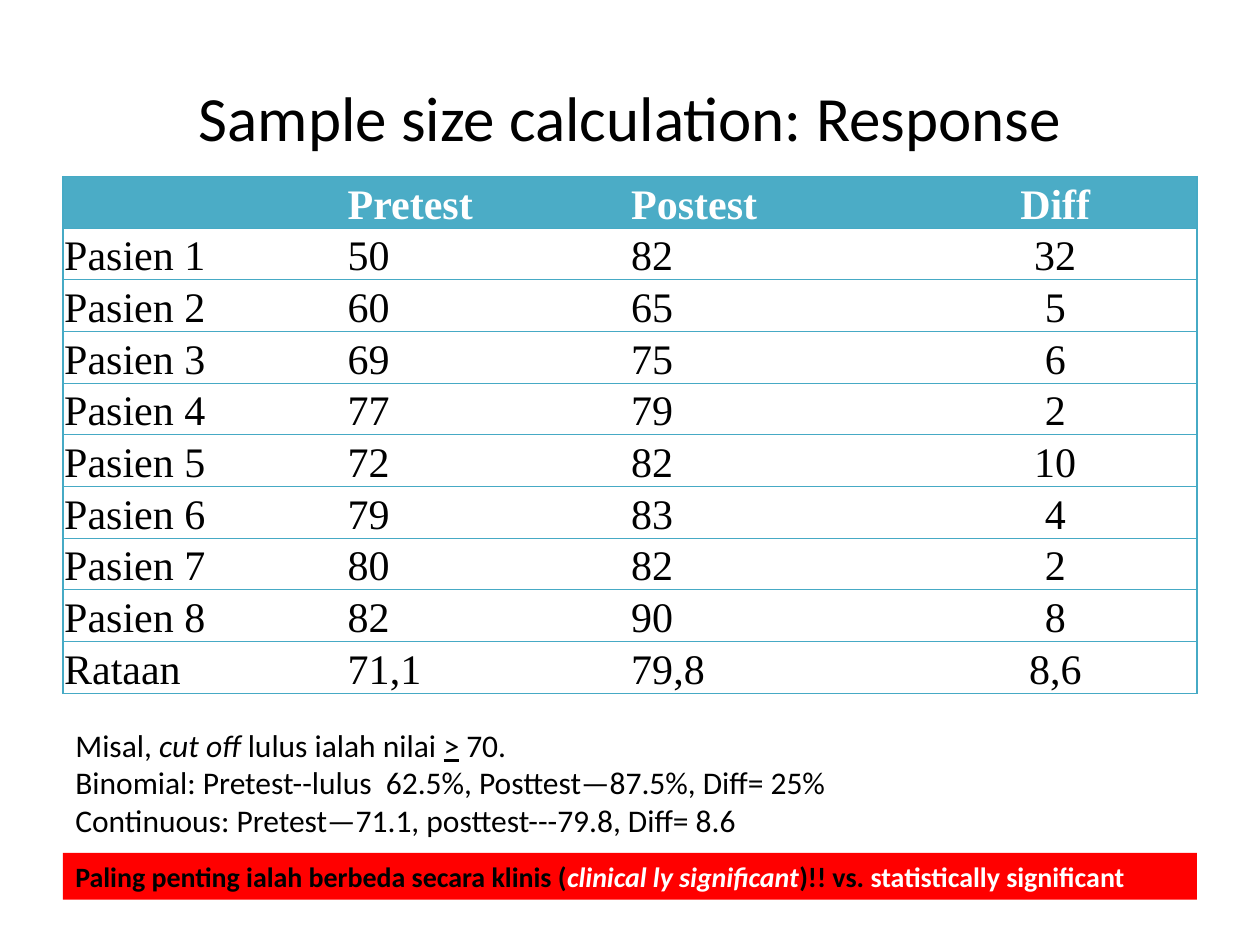
from dataclasses import dataclass

from lxml import etree
from pptx import Presentation, util as u
from pptx.dml.color import RGBColor
from pptx.enum import shapes, text
from pptx.oxml import ns

COLUMNS, ROWS = 100, 75
UNIT = u.Inches(0.1)
LEFT, WIDTH = 5, 90


@dataclass(frozen=True)
class Theme:
    body_font: str = "Calibri"
    table_font: str = "Times New Roman"
    black: str = "000000"
    white: str = "FFFFFF"
    red: str = "FF0000"
    header: str = "4BACC6"
    border: str = "46AAC5"
    title_size: int = 36
    table_size: int = 24
    note_size: int = 18
    banner_size: int = 16
    border_width: float = 0.75


THEME = Theme()

HEADINGS = ["", "Pretest", "Postest", "Diff"]
SCORES = [(50, 82, 32), (60, 65, 5), (69, 75, 6), (77, 79, 2),
          (72, 82, 10), (79, 83, 4), (80, 82, 2), (82, 90, 8)]
AVERAGES = ["Rataan", "71,1", "79,8", "8,6"]


def grid(*cells):
    """Turn grid columns and rows into slide lengths."""
    return [int(cell * UNIT) for cell in cells]


def add_run(paragraph, words, size, color=THEME.black, font=THEME.body_font,
            bold=False, italic=False, underline=False):
    run = paragraph.add_run()
    run.text = words
    run.font.name = font
    run.font.size = u.Pt(size)
    run.font.color.rgb = RGBColor.from_string(color)
    run.font.bold = bold
    run.font.italic = italic
    run.font.underline = underline


def fill_frame(frame, paragraphs, size, **common):
    """Write paragraphs, each a list of (words, format) runs."""
    frame.word_wrap = True
    for index, runs in enumerate(paragraphs):
        paragraph = frame.add_paragraph() if index else frame.paragraphs[0]
        for words, look in runs:
            add_run(paragraph, words, size, **{**common, **look})


def add_text(slide, top, height, paragraphs, size):
    box = slide.shapes.add_textbox(*grid(LEFT, top, WIDTH, height))
    fill_frame(box.text_frame, paragraphs, size)
    return box.text_frame


def add_banner(slide, top, height, runs):
    banner = slide.shapes.add_shape(shapes.MSO_SHAPE.RECTANGLE,
                                    *grid(LEFT, top, WIDTH, height))
    banner.shadow.inherit = False
    banner.fill.solid()
    banner.fill.fore_color.rgb = RGBColor.from_string(THEME.red)
    banner.line.fill.background()
    frame = banner.text_frame
    fill_frame(frame, [runs], THEME.banner_size, bold=True)
    frame.paragraphs[0].alignment = text.PP_ALIGN.LEFT
    frame.vertical_anchor = text.MSO_ANCHOR.TOP


def set_borders(cell, visible):
    """Draw the sides named in visible and clear the others."""
    properties = cell._tc.get_or_add_tcPr()
    for side in "LRTB":
        line = etree.SubElement(properties, ns.qn(f"a:ln{side}"),
                                w=str(u.Pt(THEME.border_width)))
        if side in visible:
            fill = etree.SubElement(line, ns.qn("a:solidFill"))
            etree.SubElement(fill, ns.qn("a:srgbClr"), val=THEME.border)
        else:
            etree.SubElement(line, ns.qn("a:noFill"))


def style_cell(cell, words, is_header, centered):
    cell.margin_left = cell.margin_right = cell.margin_top = u.Inches(0.01)
    cell.margin_bottom = 0
    cell.vertical_anchor = text.MSO_ANCHOR.BOTTOM
    if is_header:
        cell.fill.solid()
        cell.fill.fore_color.rgb = RGBColor.from_string(THEME.header)
    else:
        cell.fill.background()
    paragraph = cell.text_frame.paragraphs[0]
    paragraph.alignment = text.PP_ALIGN.CENTER if centered else text.PP_ALIGN.LEFT
    if words:
        add_run(paragraph, words, THEME.table_size,
                THEME.white if is_header else THEME.black,
                THEME.table_font, bold=is_header)


def add_score_table(slide, top, row_height):
    patients = [[f"Pasien {number}", *map(str, scores)]
                for number, scores in enumerate(SCORES, start=1)]
    lines = [HEADINGS, *patients, AVERAGES]
    last = len(HEADINGS) - 1
    table = slide.shapes.add_table(
        len(lines), len(HEADINGS),
        *grid(LEFT, top, WIDTH, row_height * len(lines))).table
    table.horz_banding = False
    for row, line in enumerate(lines):
        for column, words in enumerate(line):
            cell = table.cell(row, column)
            sides = "TB" + "L" * (column == 0) + "R" * (column == last)
            set_borders(cell, sides)
            style_cell(cell, words, row == 0, column == last)


def main():
    presentation = Presentation()
    presentation.slide_width, presentation.slide_height = grid(COLUMNS, ROWS)
    slide = presentation.slides.add_slide(presentation.slide_layouts[6])

    title = add_text(slide, 3, 12.5, [[("Sample size calculation: Response", {})]],
                     THEME.title_size)
    title.vertical_anchor = text.MSO_ANCHOR.MIDDLE
    title.paragraphs[0].alignment = text.PP_ALIGN.CENTER

    add_score_table(slide, 14, 4.05)

    add_text(slide, 57.1, 7.1, [
        [("Misal, ", {}), ("cut off ", {"italic": True}),
         ("lulus ialah nilai ", {}), (">", {"underline": True}), (" 70.", {})],
        [("Binomial: Pretest--lulus  62.5%, Posttest—87.5%, Diff= 25%", {})],
    ], THEME.note_size)
    add_text(slide, 63.1, 4, [
        [("Continuous: Pretest—71.1, posttest---79.8, Diff= 8.6", {})],
    ], THEME.note_size)

    add_banner(slide, 67.7, 3.7, [
        ("Paling penting ialah berbeda secara klinis (", {}),
        ("clinical ly significant", {"color": THEME.white, "italic": True}),
        (")!! vs. ", {}),
        ("statistically significant", {"color": THEME.white}),
    ])
    presentation.save("out.pptx")


if __name__ == "__main__":
    main()
